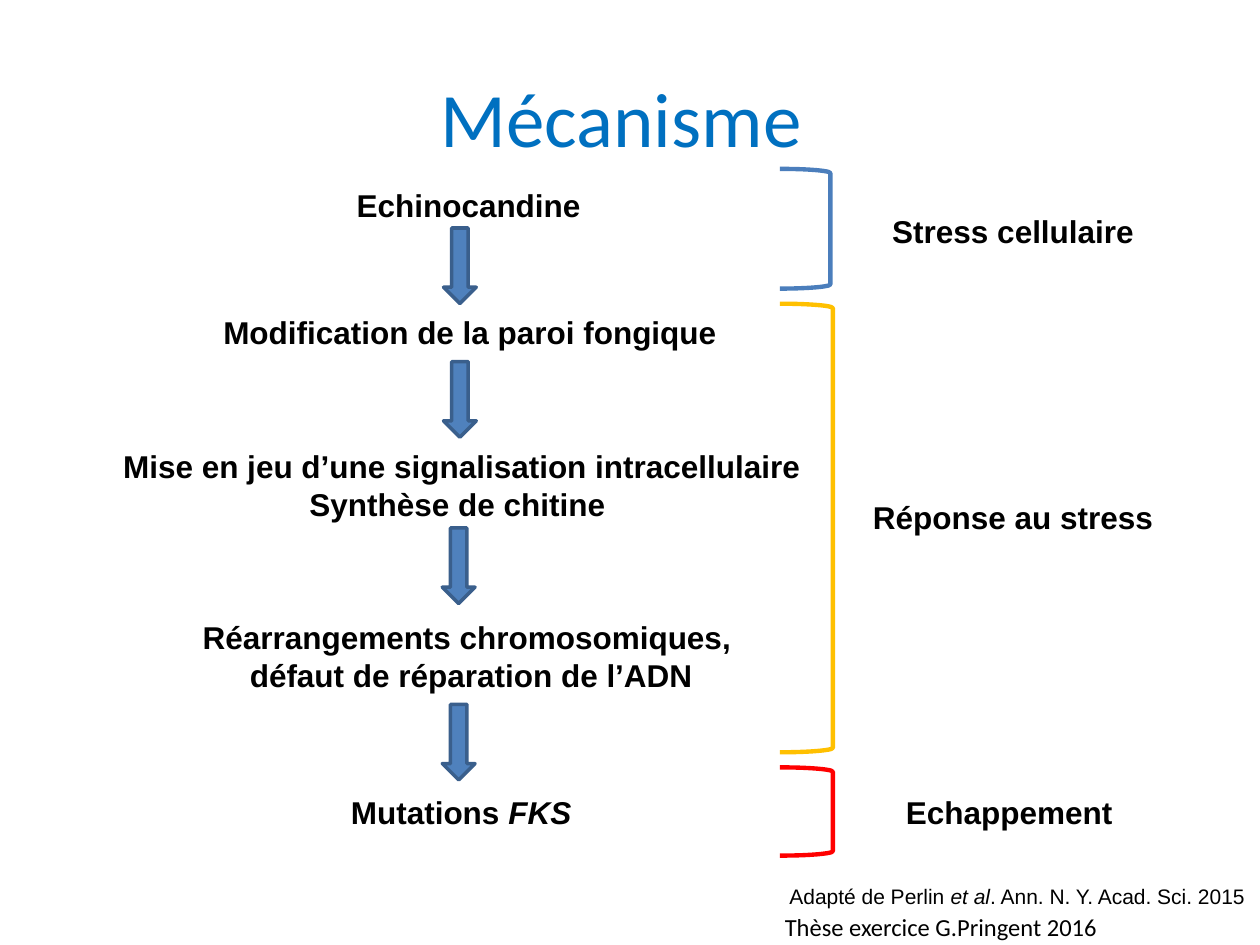
"""Build the slide on the mechanism of echinocandin resistance."""
from typing import NamedTuple

import pptx
import pptx.dml.color
import pptx.enum.shapes
import pptx.enum.text
import pptx.util

Inches, Pt = pptx.util.Inches, pptx.util.Pt
SHAPE = pptx.enum.shapes.MSO_SHAPE
ALIGN = pptx.enum.text.PP_ALIGN


class Label(NamedTuple):
    left: float
    top: float
    width: float
    height: float
    lines: list


class Bracket(NamedTuple):
    top: float
    width: float
    height: float
    color: str


class Arrow(NamedTuple):
    left: float
    top: float


LABELS = [
    Label(2.3, 1.42, 2.84, 0.4, [["Echinocandine"]]),
    Label(1.09, 2.43, 5.28, 0.4, [["Modification de la paroi fongique"]]),
    Label(0.86, 3.49, 5.61, 0.71, [["Mise en jeu d’une signalisation intracellulaire"],
                                   ["Synthèse de chitine "]]),
    Label(1.08, 4.85, 5.32, 0.71, [["Réarrangements chromosomiques, "],
                                   ["défaut de réparation de l’ADN"]]),
    Label(2.24, 6.24, 2.84, 0.4, [["Mutations", " FKS"]]),
    Label(6.62, 1.63, 2.84, 0.4, [["Stress cellulaire"]]),
    Label(6.62, 3.9, 2.84, 0.4, [["Réponse au stress"]]),
    Label(6.59, 6.24, 2.84, 0.4, [["Echappement"]]),
]
BRACKETS = [
    Bracket(1.34, 0.4, 0.95, "4B7EBC"),
    Bracket(2.41, 0.42, 3.56, "FFC000"),
    Bracket(6.09, 0.42, 0.7, "FF0000"),
]
ARROWS = [Arrow(3.35, 1.98), Arrow(3.35, 3.04), Arrow(3.34, 4.36), Arrow(3.34, 5.76)]


def rgb(color: str) -> pptx.dml.color.RGBColor:
    return pptx.dml.color.RGBColor.from_string(color)


def write(tf, lines: list, *, size: float = 18, font: str = "Arial", color: str = "000000",
          bold: bool = False, align=ALIGN.CENTER, spacing=None, wrap: bool = True) -> None:
    """Write lines of runs, every second run of a line in italics."""
    tf.word_wrap = wrap
    for i, runs in enumerate(lines):
        p = tf.add_paragraph() if i else tf.paragraphs[0]
        p.alignment = align
        if spacing:
            p.line_spacing = Pt(spacing)
        for j, text in enumerate(runs):
            r = p.add_run()
            r.text = text
            r.font.size, r.font.name = Pt(size), font
            r.font.bold, r.font.italic = bold, j % 2 == 1
            r.font.color.rgb = rgb(color)


def add_text(s, label: Label, **style) -> None:
    sp = s.shapes.add_textbox(*map(Inches, label[:4]))
    write(sp.text_frame, label.lines, **style)


def add_bracket(s, bracket: Bracket) -> None:
    sp = s.shapes.add_shape(SHAPE.LEFT_BRACKET, Inches(6.19), Inches(bracket.top),
                            Inches(bracket.width), Inches(bracket.height))
    sp.rotation = 180
    sp.shadow.inherit = False
    sp.fill.background()
    sp.line.color.rgb = rgb(bracket.color)
    sp.line.width = Pt(2.5)


def add_arrow(s, arrow: Arrow) -> None:
    sp = s.shapes.add_shape(SHAPE.RIGHT_ARROW, Inches(arrow.left), Inches(arrow.top),
                            Inches(0.6), Inches(0.26))
    sp.rotation = 90
    sp.shadow.inherit = False
    sp.fill.solid()
    sp.fill.fore_color.rgb = rgb("4F81BD")
    sp.line.color.rgb = rgb("3A5F8C")
    sp.line.width = Pt(2)


def main() -> None:
    prs = pptx.Presentation()
    prs.slide_width, prs.slide_height = Inches(10), Inches(7.5)
    s = prs.slides.add_slide(prs.slide_layouts[5])

    title = s.shapes.title
    title.left, title.top = Inches(0.5), Inches(0.3)
    title.width, title.height = Inches(9), Inches(1.25)
    title.text_frame.vertical_anchor = pptx.enum.text.MSO_ANCHOR.MIDDLE
    write(title.text_frame, [["Mécanisme "]], size=44, font="Calibri", color="0070C0")

    for label in LABELS:
        add_text(s, label, bold=True, spacing=22)
    for bracket in BRACKETS:
        add_bracket(s, bracket)
    for arrow in ARROWS:
        add_arrow(s, arrow)

    citation = ["Adapté de Perlin ", "et al", ". Ann. N. Y. Acad. Sci. 2015"]
    add_text(s, Label(5.82, 6.96, 4.16, 0.3, [citation]), size=12, align=ALIGN.RIGHT)
    add_text(s, Label(6.13, 7.19, 2.75, 0.34, [["Thèse exercice G.Pringent 2016"]]),
             size=14, font="Calibri", align=ALIGN.LEFT, wrap=False)

    prs.save("out.pptx")


if __name__ == "__main__":
    main()
